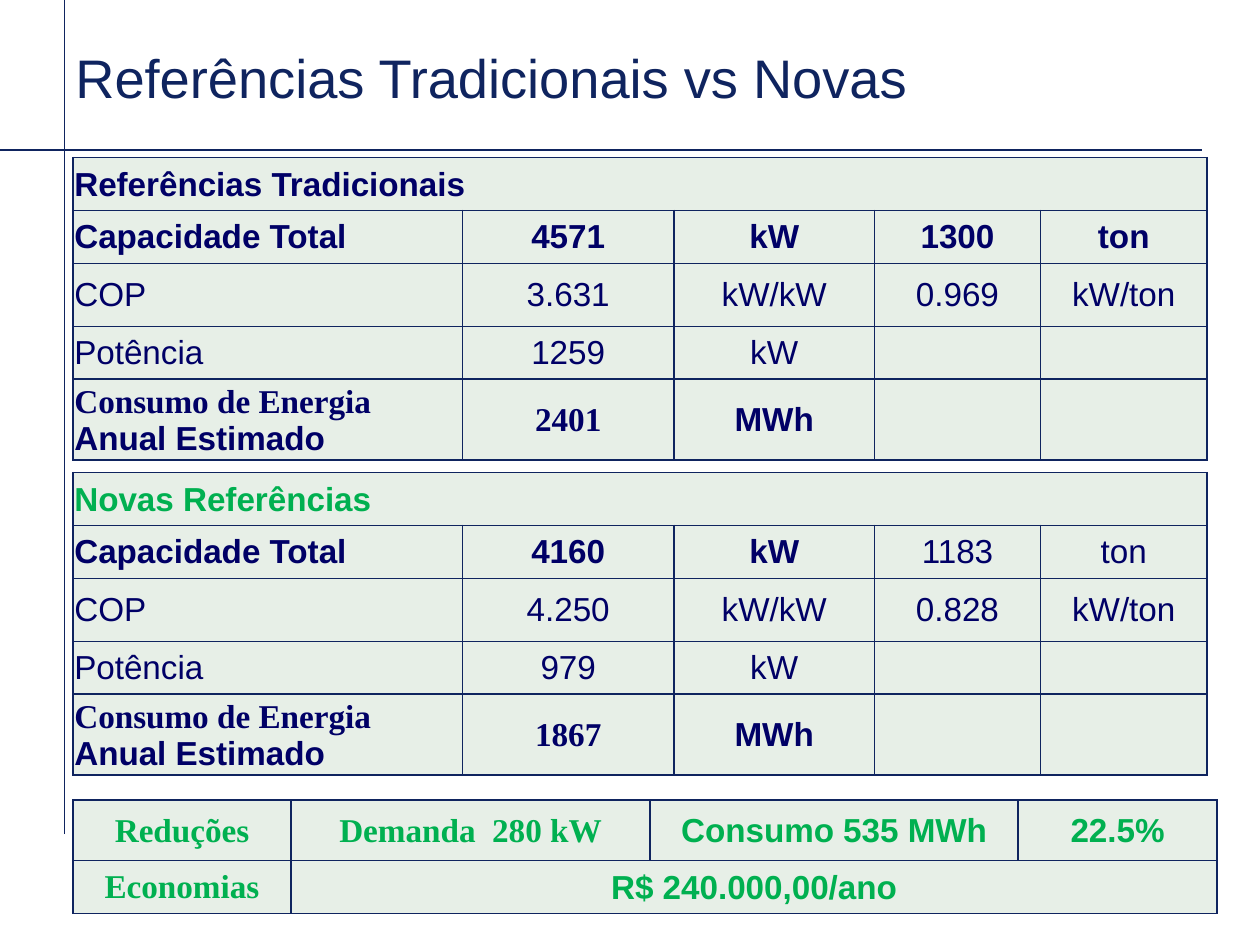
from lxml import etree
from pptx import Presentation
from pptx.dml.color import RGBColor
from pptx.enum.shapes import MSO_CONNECTOR
from pptx.enum.text import MSO_ANCHOR, PP_ALIGN
from pptx.oxml.ns import qn
from pptx.util import Inches, Pt

STRAIGHT = MSO_CONNECTOR.STRAIGHT
MIDDLE, BOTTOM = MSO_ANCHOR.MIDDLE, MSO_ANCHOR.BOTTOM
LEFT, CENTER = PP_ALIGN.LEFT, PP_ALIGN.CENTER
NAVY, INK, GREEN, PALE = "0F245F", "000066", "00B050", "E7EFE7"
SANS, SERIF = "Arial", "Times New Roman"


def paint(color, value):
    color.rgb = RGBColor.from_string(value)


def write(para, text, font=SANS, size=19, color=INK, bold=False, align=LEFT):
    """Append one formatted span to a paragraph."""
    para.alignment = align
    span = para.add_run()
    span.text = text
    span.font.name, span.font.size, span.font.bold = font, Pt(size), bold
    paint(span.font.color, color)


deck = Presentation()
deck.slide_width, deck.slide_height = Inches(10), Inches(7.5)
page = deck.slides.add_slide(deck.slide_layouts[6])
unit = deck.slide_width // 100  # the grid is 100 columns by 75 rows

# Crossing guide lines
for ends in [(5.1, 66.2, 5.1, 0), (0, 11.9, 95.4, 11.9)]:
    guide = page.shapes.add_connector(STRAIGHT, *[int(end * unit) for end in ends])
    guide.line.width = Pt(0.75)
    paint(guide.line.color, NAVY)
    etree.SubElement(guide._element.spPr, qn("a:effectLst"))

# Title
title = page.shapes.add_textbox(5 * unit, int(2.5 * unit), int(75.8 * unit), int(6.7 * unit))
title.text_frame.word_wrap = True
title.text_frame.vertical_anchor = BOTTOM
heading = title.text_frame.paragraphs[0]
heading.line_spacing = 0.85
write(heading, "Referências Tradicionais vs Novas", size=31, color=NAVY)

# Each cell is a list of (text, format) spans
plain, strong, serif = {}, {"bold": True}, {"bold": True, "font": SERIF}
green = {"bold": True, "color": GREEN}
green_serif = {**green, "font": SERIF}

# Name, name format, capacity, tons, tons format, COP, kW/ton, power, energy
references = [
    ("Referências Tradicionais", strong, "4571", "1300", strong, "3.631", "0.969", "1259", "2401"),
    ("Novas Referências", green, "4160", "1183", plain, "4.250", "0.828", "979", "1867"),
]
tables = []
for order, (name, name_format, capacity, tons, tons_format, cop, ratio, power, energy) in enumerate(references):
    cells = [
        [[(name, name_format)]],
        [[("Capacidade Total", strong)], [(capacity, strong)], [("kW", strong)],
         [(tons, tons_format)], [("ton", tons_format)]],
        [[(text, plain)] for text in ("COP", cop, "kW/kW", ratio, "kW/ton")],
        [[(text, plain)] for text in ("Potência", power, "kW")],
        [[("Consumo de Energia ", serif), ("Anual Estimado", strong)],
         [(energy, serif)], [("MWh", strong)]],
    ]
    tables.append((12.5 + 25 * order, [30.9, 16.8, 15.9, 13.2, 13.2],
                   [4.2, 4.2, 5, 4.2, 5.9], cells, (0, 0, 4), LEFT))
savings = [
    [[("Reduções", green_serif)], [("Demanda  280 kW", green_serif)],
     [("Consumo 535 MWh", green)], [("22.5%", green)]],
    [[("Economias", green_serif)], [("R$ 240.000,00/ano", green)]],
]
tables.append((63.5, [17.3, 28.5, 29.2, 15.8], [4.8, 4.2], savings, (1, 1, 3), CENTER))

for top, widths, heights, cells, (merge_row, merge_start, merge_end), first_align in tables:
    table = page.shapes.add_table(
        len(heights), len(widths), int(5.8 * unit), int(top * unit),
        int(sum(widths) * unit), int(sum(heights) * unit)).table
    table.first_row = table.horz_banding = False
    for column, width in zip(table.columns, widths):
        column.width = int(width * unit)
    for row, height in zip(table.rows, heights):
        row.height = int(height * unit)
    for cell in table.iter_cells():
        cell.fill.solid()
        paint(cell.fill.fore_color, PALE)
        cell.vertical_anchor = MIDDLE
        cell.margin_left = cell.margin_right = cell.margin_top = Inches(0.01)
        cell.margin_bottom = 0
        properties = cell._tc.get_or_add_tcPr()
        for position, side in enumerate(("lnL", "lnR", "lnT", "lnB")):
            border = etree.Element(qn("a:" + side), w=str(Pt(1)))
            fill = etree.SubElement(border, qn("a:solidFill"))
            etree.SubElement(fill, qn("a:srgbClr"), val=NAVY)
            properties.insert(position, border)
    table.cell(merge_row, merge_start).merge(table.cell(merge_row, merge_end))
    for row, row_cells in enumerate(cells):
        for column, spans in enumerate(row_cells):
            para = table.cell(row, column).text_frame.paragraphs[0]
            for text, style in spans:
                write(para, text, align=CENTER if column else first_align, **style)

deck.save("out.pptx")
